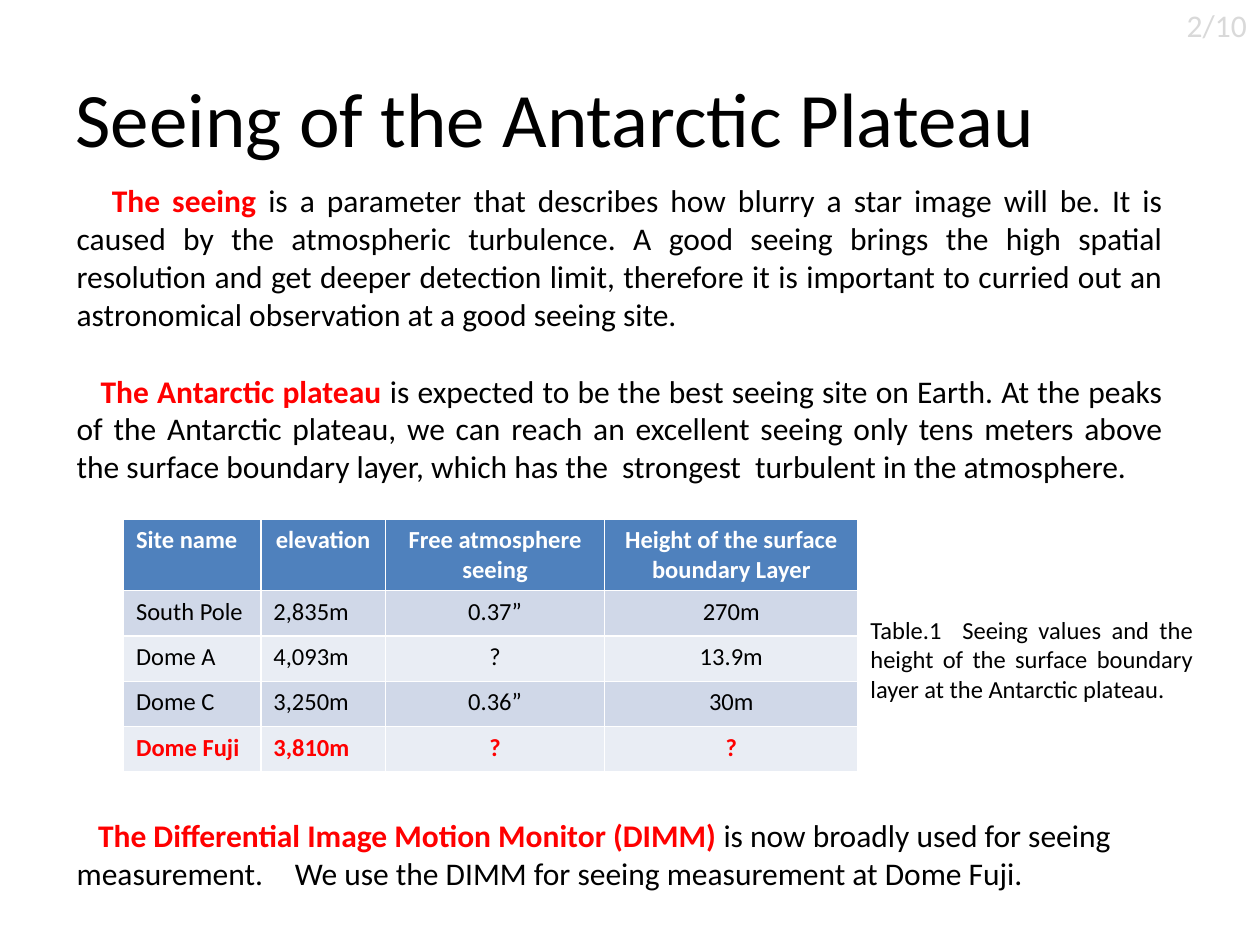
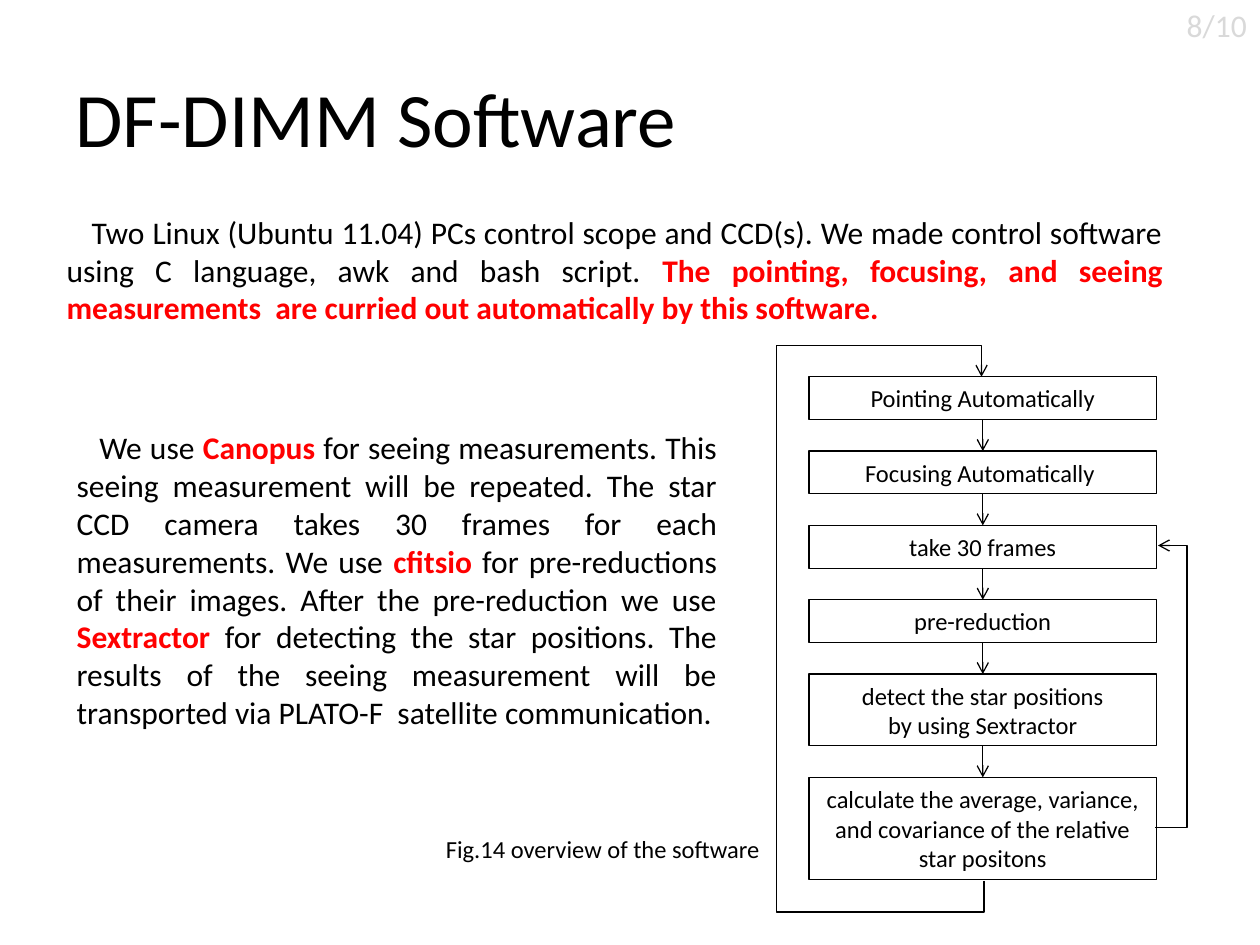
import pptx
import pptx.util
import pptx.dml.color
import pptx.enum.shapes
import pptx.enum.text
import pptx.oxml.ns
from lxml import etree

Inches = pptx.util.Inches
Pt = pptx.util.Pt
ALIGN = pptx.enum.text.PP_ALIGN
CONNECTOR = pptx.enum.shapes.MSO_CONNECTOR
qn = pptx.oxml.ns.qn

FONT = "Calibri"
COLORS = {
    "text": "000000",
    "highlight": "FF0000",
    "page": "D9D9D9",
    "header": "4F81BD",
    "header_text": "FFFFFF",
    "band_dark": "D0D8E8",
    "band_light": "E9EDF4",
}


def write(paragraph, runs, size, align=ALIGN.LEFT, color="text", indent=0):
    """Fill a paragraph with (text, is_bold) runs; bold body text is highlighted."""
    paragraph.alignment = align
    if indent:
        paragraph._p.get_or_add_pPr().set("indent", str(Inches(indent)))
    for text, bold in runs:
        run = paragraph.add_run()
        run.text = text
        run.font.name = FONT
        run.font.size = Pt(size)
        run.font.bold = bold
        name = "highlight" if bold and color == "text" else color
        run.font.color.rgb = pptx.dml.color.RGBColor.from_string(COLORS[name])


def style_arrow(arrow, preset=None, bends=()):
    """Thin black open arrow without shadow; bends are fractions of its box."""
    arrow.line.width = Pt(0.75)
    arrow.line.color.rgb = pptx.dml.color.RGBColor.from_string(COLORS["text"])
    properties = arrow._element.spPr
    etree.SubElement(properties.find(qn("a:ln")), qn("a:tailEnd"), type="arrow")
    etree.SubElement(properties, qn("a:effectLst"))
    if preset:
        geometry = properties.find(qn("a:prstGeom"))
        geometry.set("prst", preset)
        guides = geometry.find(qn("a:avLst"))
        for number, bend in enumerate(bends, 1):
            etree.SubElement(guides, qn("a:gd"), name=f"adj{number}",
                             fmla=f"val {round(bend * 100000)}")


deck = pptx.Presentation()
deck.slide_width = Inches(10)
deck.slide_height = Inches(7.5)

# Titles and page numbers
slides = []
for heading, page in [("Seeing of the Antarctic Plateau", "2/10"),
                      ("DF-DIMM Software", "8/10")]:
    slide = deck.slides.add_slide(deck.slide_layouts[5])
    title = slide.shapes.title
    title.left, title.top = Inches(0.5), Inches(0.3)
    title.width, title.height = Inches(9), Inches(1.25)
    write(title.text_frame.paragraphs[0], [(heading, False)], 44)
    page_number = slide.shapes.add_textbox(Inches(9.32), 0, Inches(0.68), Inches(0.4))
    page_number.text_frame.word_wrap = False
    write(page_number.text_frame.paragraphs[0], [(page, False)], 18, color="page")
    slides.append(slide)
seeing_slide, software_slide = slides

# Running text and captions: slide, box, size, alignment, first-line indent, runs
passages = [
    (seeing_slide, (0.51, 1.39, 8.82, 1.31), 18, ALIGN.JUSTIFY, 0.28, [
        ("The seeing ", True),
        ("is a parameter that describes how blurry a star image will be. It is caused by "
         "the atmospheric turbulence. A good seeing brings the high spatial resolution and "
         "get deeper detection limit, therefore it is important to curried out an "
         "astronomical observation at a good seeing site.", False)]),
    (seeing_slide, (0.51, 2.9, 8.82, 1.01), 18, ALIGN.JUSTIFY, 0.19, [
        ("The Antarctic plateau", True),
        (" is expected to be the best seeing site on Earth. At the peaks of the Antarctic "
         "plateau, we can reach an excellent seeing only tens meters above the surface "
         "boundary layer, which has the  strongest  turbulent in the atmosphere.", False)]),
    (seeing_slide, (6.81, 4.83, 2.76, 0.81), 14, ALIGN.JUSTIFY, 0, [
        ("Table.1  Seeing values and the height of the surface boundary layer at the "
         "Antarctic plateau.", False)]),
    (seeing_slide, (0.51, 6.43, 8.82, 0.71), 18, ALIGN.LEFT, 0.17, [
        ("The Differential Image Motion Monitor (DIMM) ", True),
        ("is now broadly used for seeing measurement.　We use the DIMM for seeing "
         "measurement at Dome Fuji.", False)]),
    (software_slide, (0.43, 1.64, 8.9, 1.01), 18, ALIGN.JUSTIFY, 0.2, [
        ("Two Linux (Ubuntu 11.04) PCs control scope and CCD(s). We made control software "
         "using C language, awk and bash script. ", False),
        ("The pointing, focusing, and seeing measurements  are curried out automatically "
         "by this software.", True)]),
    (software_slide, (0.51, 3.35, 5.28, 2.52), 18, ALIGN.JUSTIFY, 0.18, [
        ("We use ", False),
        ("Canopus", True),
        (" for seeing measurements. This seeing measurement will be repeated. The star CCD "
         "camera takes 30 frames for each measurements. We use ", False),
        ("cfitsio", True),
        (" for pre-reductions of their images. After the pre-reduction we use ", False),
        ("Sextractor ", True),
        ("for detecting the star positions. The results of the seeing measurement will be "
         "transported via PLATO-F  satellite communication.", False)]),
    (software_slide, (3.44, 6.57, 2.8, 0.34), 14, ALIGN.LEFT, 0, [
        ("Fig.14 overview of the software", False)]),
]
for slide, box, size, align, indent, runs in passages:
    passage = slide.shapes.add_textbox(*map(Inches, box))
    passage.text_frame.word_wrap = True
    write(passage.text_frame.paragraphs[0], runs, size, align, indent=indent)

# Table of seeing values
sites = [
    ("Site name", "elevation", "Free atmosphere seeing",
     "Height of the surface boundary Layer"),
    ("South Pole", "2,835m", "0.37”", "270m"),
    ("Dome A", "4,093m", "?", "13.9m"),
    ("Dome C", "3,250m", "0.36”", "30m"),
    ("Dome Fuji", "3,810m", "?", "?"),
]
site_table = seeing_slide.shapes.add_table(
    len(sites), 4, Inches(0.98), Inches(4.12), Inches(5.83), Inches(2)).table
for column, width in zip(site_table.columns, (1.09, 0.99, 1.74, 2.01)):
    column.width = Inches(width)
for r, site in enumerate(sites):
    is_header = r == 0
    site_table.rows[r].height = Inches(0.56 if is_header else 0.36)
    fill = "header" if is_header else "band_dark" if r % 2 else "band_light"
    for c, value in enumerate(site):
        cell = site_table.cell(r, c)
        cell.fill.solid()
        cell.fill.fore_color.rgb = pptx.dml.color.RGBColor.from_string(COLORS[fill])
        centred = c > 1 or (is_header and c == 1)
        write(cell.text_frame.paragraphs[0],
              [(value, is_header or site[0] == "Dome Fuji")], 14,
              ALIGN.CENTER if centred else ALIGN.LEFT,
              "header_text" if is_header else "text")

# Flowchart steps: height and lines
steps = [
    (0.34, ["Pointing Automatically"]),
    (0.34, ["Focusing Automatically "]),
    (0.34, ["take 30 frames"]),
    (0.34, ["pre-reduction"]),
    (0.57, ["detect the star positions", "by using Sextractor"]),
    (0.81, ["calculate the average, variance, and covariance of the relative star positons"]),
]
STEP_GAP = 0.25
step_top = 2.99
previous_step = None
for height, lines in steps:
    step = software_slide.shapes.add_shape(
        pptx.enum.shapes.MSO_SHAPE.RECTANGLE,
        Inches(6.42), Inches(step_top), Inches(2.76), Inches(height))
    step.shadow.inherit = False
    step.fill.background()
    step.line.width = Pt(0.75)
    step.line.color.rgb = pptx.dml.color.RGBColor.from_string(COLORS["text"])
    step.text_frame.word_wrap = True
    for number, line in enumerate(lines):
        paragraph = (step.text_frame.add_paragraph() if number
                     else step.text_frame.paragraphs[0])
        write(paragraph, [(line, False)], 14, ALIGN.CENTER)
    if previous_step is not None:
        next_arrow = software_slide.shapes.add_connector(CONNECTOR.STRAIGHT, 0, 0, 0, 0)
        next_arrow.begin_connect(previous_step, 2)
        next_arrow.end_connect(step, 0)
        style_arrow(next_arrow)
    previous_step = step
    step_top += height + STEP_GAP

# Loop from the last step back to taking frames
frames_loop = software_slide.shapes.add_connector(
    CONNECTOR.ELBOW, Inches(9.17), Inches(6.57), Inches(9.19), Inches(4.33))
style_arrow(frames_loop, "bentConnector3", [12.5])

# Loop from the last step back to pointing, turned a quarter so it runs upwards
pointing_loop = software_slide.shapes.add_connector(
    CONNECTOR.ELBOW, Inches(9.8), Inches(4.98), Inches(5.8), Inches(5))
pointing_loop._element.spPr.find(qn("a:xfrm")).set("rot", str(90 * 60000))
style_arrow(pointing_loop, "bentConnector5", [-0.0625, 82, 1.0625])

deck.save("out.pptx")
